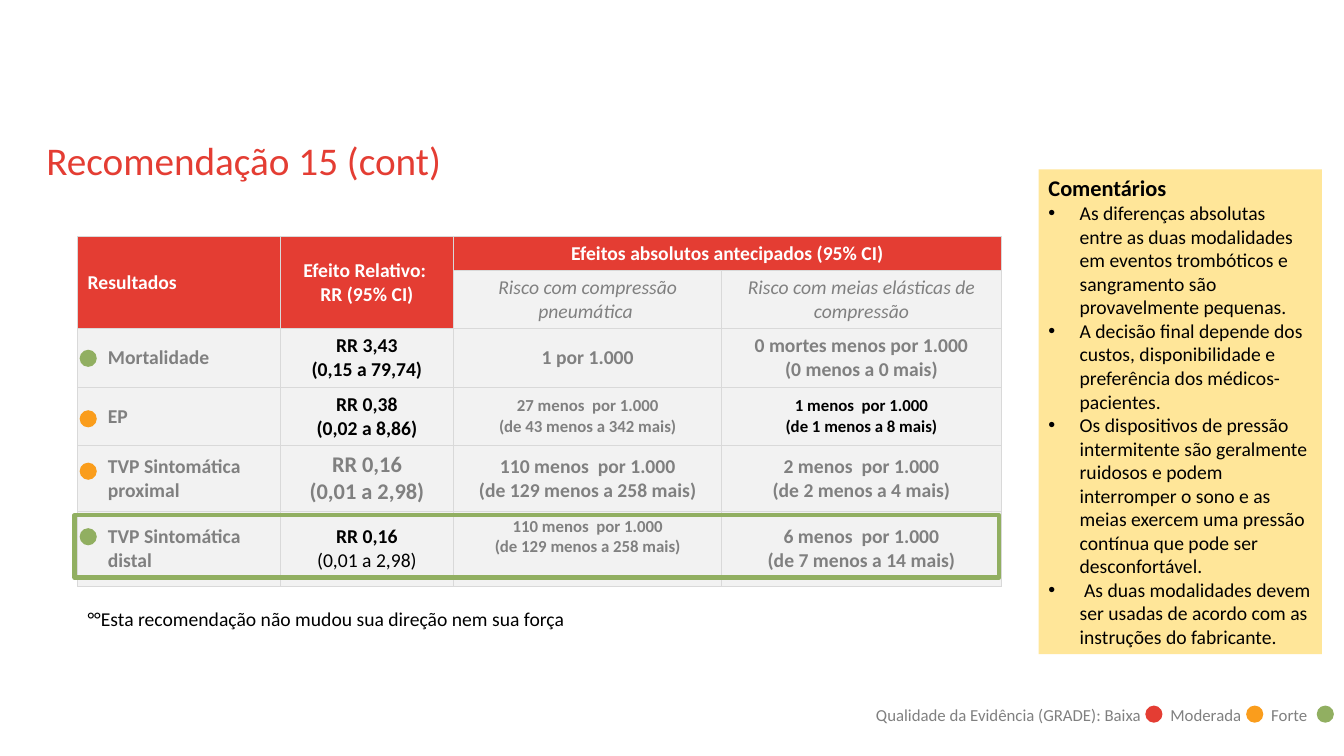
import pptx
import pptx.util
import pptx.dml.color
import pptx.enum.shapes
import pptx.enum.text
import pptx.oxml
import pptx.oxml.ns

Inches, Pt = pptx.util.Inches, pptx.util.Pt
RGBColor = pptx.dml.color.RGBColor
Shape = pptx.enum.shapes.MSO_SHAPE
Align = pptx.enum.text.PP_ALIGN
Anchor = pptx.enum.text.MSO_ANCHOR
AutoSize = pptx.enum.text.MSO_AUTO_SIZE

RED = RGBColor(0xE4, 0x3D, 0x33)
ORANGE = RGBColor(0xFA, 0x9D, 0x1C)
GREEN = RGBColor(0x91, 0xAF, 0x61)
SAND = RGBColor(0xFF, 0xE6, 0x99)
PALE = RGBColor(0xF2, 0xF2, 0xF2)
BORDER = RGBColor(0xD9, 0xD9, 0xD9)
GREY = RGBColor(0x80, 0x80, 0x80)
BLACK = RGBColor(0, 0, 0)
WHITE = RGBColor(0xFF, 0xFF, 0xFF)

TITLE = "Recomendação 15 (cont)"
HEADINGS = ["Resultados", "Efeito Relativo: \nRR (95% CI)", "Efeitos absolutos antecipados (95% CI)"]
RISKS = ["Risco com compressão pneumática ", "Risco com meias elásticas de compressão"]
OUTCOMES = [
    [("Mortalidade", 14, GREY), ("RR 3,43\v(0,15 a 79,74)", 14, BLACK),
     ("1 por 1.000", 14, GREY), ("0 mortes menos por 1.000\n(0 menos a 0 mais)", 14, GREY)],
    [("EP", 14, GREY), ("RR 0,38\v(0,02 a 8,86)", 14, BLACK),
     ("27 menos  por 1.000\n(de 43 menos a 342 mais)", 12, GREY),
     ("1 menos  por 1.000\n(de 1 menos a 8 mais)", 12, BLACK)],
    [("TVP Sintomática  proximal", 14, GREY), ("RR 0,16\n(0,01 a 2,98)", 16, GREY),
     ("110 menos  por 1.000\n(de 129 menos a 258 mais)", 14, GREY),
     ("2 menos  por 1.000\n(de 2 menos a 4 mais)", 14, GREY)],
    [("TVP Sintomática distal", 14, GREY), ("RR 0,16\v(0,01 a 2,98)", 14, BLACK),
     ("110 menos  por 1.000\n(de 129 menos a 258 mais)", 12, GREY),
     ("6 menos  por 1.000\n(de 7 menos a 14 mais)", 14, GREY)],
]
QUALITY_DOTS = [(3.47, GREEN), (4.07, ORANGE), (4.59, ORANGE), (5.24, GREEN)]
FOOTNOTE = "°°Esta recomendação não mudou sua direção nem sua força"
COMMENTS_HEADING = "Comentários"
COMMENTS = [
    "As diferenças absolutas entre as duas modalidades em eventos trombóticos e sangramento são provavelmente pequenas.",
    "A decisão final depende dos custos, disponibilidade e preferência dos médicos-pacientes.",
    "Os dispositivos de pressão intermitente são geralmente ruidosos e podem interromper o sono e as meias exercem uma pressão contínua que pode ser desconfortável.",
    " As duas modalidades devem ser usadas de acordo com as instruções do fabricante.",
]
LEGEND = "Qualidade da Evidência (GRADE): Baixa\tModerada\tForte"
LEGEND_TABS = [2.92, 3.92]
LEGEND_DOTS = [(11.36, RED), (12.36, ORANGE), (13.06, GREEN)]

TABLE_LEFT, TABLE_TOP = 0.77, 2.35
COLUMNS = [2.01, 1.72, 2.66, 2.77]
ROWS = [0.33, 0.57, 0.58, 0.58, 0.65, 0.74]
DOT = 0.17


def area(*lengths):
    return [Inches(length) for length in lengths]


def add_xml(parent, tag, content="", **attributes):
    listed = "".join(f' {name}="{value}"' for name, value in attributes.items())
    namespace = pptx.oxml.ns.nsdecls("a")
    parent.append(pptx.oxml.parse_xml(f"<a:{tag} {namespace}{listed}>{content}</a:{tag}>"))


def style(para, size, color, bold=False, italic=False, align=Align.LEFT):
    para.alignment = align
    font = para.font
    font.name, font.size, font.bold, font.italic = "Calibri", Pt(size), bold, italic
    font.color.rgb = color


def add_figure(shapes, kind, place, fill=None):
    figure = shapes.add_shape(kind, *area(*place))
    figure.shadow.inherit = False
    if fill is None:
        figure.fill.background()
    else:
        figure.fill.solid()
        figure.fill.fore_color.rgb = fill
        figure.line.fill.background()
    return figure


def add_dot(shapes, left, top, color):
    add_figure(shapes, Shape.OVAL, (left, top, DOT, DOT), color)


def add_note(shapes, place, text, size, color):
    box = shapes.add_textbox(*area(*place))
    box.text_frame.word_wrap = True
    box.text_frame.auto_size = AutoSize.SHAPE_TO_FIT_TEXT
    para = box.text_frame.paragraphs[0]
    para.text = text
    return para


def fill_cell(cell, text, size, color, fill, bold=True, italic=False, align=Align.CENTER):
    cell.text = text
    cell.vertical_anchor = Anchor.MIDDLE
    for para in cell.text_frame.paragraphs:
        style(para, size, color, bold, italic, align)
    properties = cell._tc.get_or_add_tcPr()
    for side in ("lnL", "lnR", "lnT", "lnB"):
        add_xml(properties, side, f'<a:solidFill><a:srgbClr val="{BORDER}"/></a:solidFill>', w=Pt(1))
    cell.fill.solid()
    cell.fill.fore_color.rgb = fill


def add_results(slide):
    table = slide.shapes.add_table(
        len(ROWS), len(COLUMNS), *area(TABLE_LEFT, TABLE_TOP, sum(COLUMNS), sum(ROWS))).table
    table.first_row = table.horz_banding = False
    for column, width in zip(table.columns, COLUMNS):
        column.width = Inches(width)
    for row, height in zip(table.rows, ROWS):
        row.height = Inches(height)
    for index, heading in enumerate(HEADINGS):
        fill_cell(table.cell(0, index), heading, 14, WHITE, RED,
                  align=Align.CENTER if index else Align.LEFT)
    for index in (0, 1):
        fill_cell(table.cell(1, index), "", 14, WHITE, RED)
        table.cell(0, index).merge(table.cell(1, index))
    fill_cell(table.cell(0, 3), "", 14, WHITE, RED)
    table.cell(0, 2).merge(table.cell(0, 3))
    for index, risk in enumerate(RISKS, 2):
        fill_cell(table.cell(1, index), risk, 14, GREY, PALE, bold=False, italic=True)
    for row, outcome in enumerate(OUTCOMES, 2):
        for column, (text, size, color) in enumerate(outcome):
            fill_cell(table.cell(row, column), text, size, color, PALE,
                      align=Align.CENTER if column else Align.LEFT)
        table.cell(row, 0).margin_left = Inches(0.3)
    last = len(ROWS) - 1
    table.cell(last, 1).text_frame.paragraphs[0].runs[-1].font.bold = False
    table.cell(last, 2).margin_bottom = Inches(0.29)


def add_comments(slide):
    panel = add_figure(slide.shapes, Shape.RECTANGLE, (10.3, 1.68, 2.81, 4.81), SAND)
    frame = panel.text_frame
    frame.word_wrap = True
    frame.vertical_anchor = Anchor.TOP
    frame.auto_size = AutoSize.SHAPE_TO_FIT_TEXT
    frame.text = COMMENTS_HEADING
    style(frame.paragraphs[0], 16, BLACK, bold=True)
    for comment in COMMENTS:
        para = frame.add_paragraph()
        para.text = comment
        properties = para._p.get_or_add_pPr()
        properties.set("marL", str(Inches(0.31)))
        properties.set("indent", str(-Inches(0.31)))
        add_xml(properties, "buFont", typeface="Arial")
        add_xml(properties, "buChar", char="•")
        style(para, 14, BLACK)


def add_legend(slide):
    legend = slide.shapes.add_group_shape().shapes
    para = add_note(legend, (8.59, 6.94, 4.53, 0.3), LEGEND, 12, GREY)
    stops = "".join(f'<a:tab pos="{Inches(stop)}" algn="l"/>' for stop in LEGEND_TABS)
    add_xml(para._p.get_or_add_pPr(), "tabLst", stops)
    style(para, 12, GREY)
    for left, color in LEGEND_DOTS:
        add_dot(legend, left, 7, color)


def main():
    deck = pptx.Presentation()
    deck.slide_width, deck.slide_height = area(13.33, 7.5)
    slide = deck.slides.add_slide(deck.slide_layouts[5])
    title = slide.shapes.title
    title.left, title.top, title.width, title.height = area(0.46, 1.36, 12, 0.46)
    frame = title.text_frame
    frame.margin_left = frame.margin_right = frame.margin_top = frame.margin_bottom = 0
    frame.vertical_anchor = Anchor.MIDDLE
    frame.auto_size = AutoSize.NONE
    frame.text = TITLE
    style(frame.paragraphs[0], 28, RED)

    add_results(slide)
    highlight = add_figure(slide.shapes, Shape.RECTANGLE, (0.74, 5.11, 9.17, 0.62))
    highlight.line.color.rgb = GREEN
    highlight.line.width = Pt(3)
    for top, color in QUALITY_DOTS:
        add_dot(slide.shapes, 0.79, top, color)
    style(add_note(slide.shapes, (0.77, 5.97, 6.45, 0.34), FOOTNOTE, 14, BLACK), 14, BLACK)
    add_comments(slide)
    add_legend(slide)
    deck.save("out.pptx")


if __name__ == "__main__":
    main()
